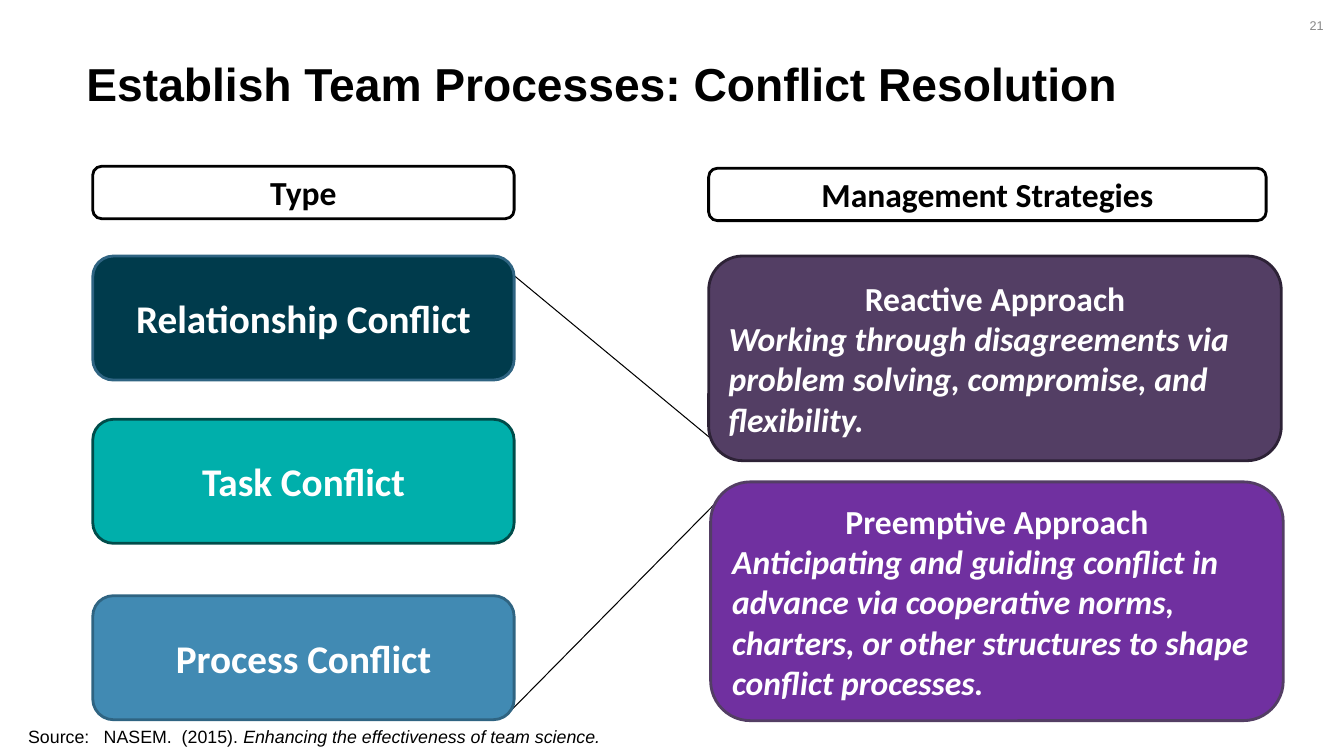
from dataclasses import dataclass

from lxml import etree
from pptx import Presentation
from pptx.dml.color import RGBColor
from pptx.enum import shapes, text
from pptx.oxml import ns
from pptx.util import Pt


@dataclass(frozen=True)
class Theme:
    heading_font: str = "Arial"
    body_font: str = "Calibri"
    black: str = "000000"
    white: str = "FFFFFF"
    gray: str = "888888"
    navy: str = "003B4C"
    teal: str = "00AFAB"
    teal_edge: str = "004C4A"
    blue: str = "418AB3"
    blue_edge: str = "2F6482"
    plum: str = "533E64"
    plum_edge: str = "2D2236"
    purple: str = "7030A0"
    title_size: float = 33
    type_size: float = 28
    body_size: float = 24
    source_size: float = 12.7
    number_size: float = 9
    border: float = 2
    connector: float = 0.75


THEME = Theme()

TYPE_LEFT, TYPE_WIDTH, TYPE_HEIGHT = 66.24, 301, 88.6
STRATEGY_LEFT, STRATEGY_WIDTH = 506.2, 409
HEADER_HEIGHT = 37.4
FIRST_ROW = 182.9


def color(value):
    return RGBColor.from_string(value)


def format_runs(paragraph, font, size, fill, bold=False, italic=False):
    for run in paragraph.runs:
        run.font.name = font
        run.font.size = Pt(size)
        run.font.color.rgb = color(fill)
        run.font.bold = bold
        run.font.italic = italic


def add_text(slide, box, content, size, fill, bold=False,
             align=text.PP_ALIGN.LEFT, anchor=text.MSO_ANCHOR.MIDDLE):
    """Add a one-paragraph text box and return its paragraph."""
    frame = slide.shapes.add_textbox(*map(Pt, box)).text_frame
    frame.word_wrap = True
    frame.vertical_anchor = anchor
    frame.text = content
    paragraph = frame.paragraphs[0]
    paragraph.alignment = align
    format_runs(paragraph, THEME.heading_font, size, fill, bold)
    return paragraph


def add_card(slide, box, fill, edge, heading, size, font_color=THEME.white, detail=None):
    """Add a rounded box with a centred heading and an optional italic detail."""
    shape = slide.shapes.add_shape(shapes.MSO_SHAPE.ROUNDED_RECTANGLE, *map(Pt, box))
    shape.shadow.inherit = False
    shape.fill.solid()
    shape.fill.fore_color.rgb = color(fill)
    shape.line.color.rgb = color(edge)
    shape.line.width = Pt(THEME.border)
    frame = shape.text_frame
    frame.word_wrap = True
    frame.vertical_anchor = text.MSO_ANCHOR.MIDDLE
    frame.text = heading
    paragraph = frame.paragraphs[0]
    paragraph.alignment = text.PP_ALIGN.CENTER
    format_runs(paragraph, THEME.body_font, size, font_color, bold=True)
    if detail:
        paragraph = frame.add_paragraph()
        paragraph.text = detail
        paragraph.alignment = text.PP_ALIGN.LEFT
        format_runs(paragraph, THEME.body_font, size, font_color, bold=True, italic=True)


def add_line(slide, *ends):
    line = slide.shapes.add_connector(shapes.MSO_CONNECTOR.STRAIGHT, *map(Pt, ends))
    line.line.color.rgb = color(THEME.black)
    line.line.width = Pt(THEME.connector)
    etree.SubElement(line._element.spPr, ns.qn("a:effectLst"))


def add_source(slide):
    paragraph = add_text(slide, (13, 514.8, 934.6, 22.3), "Source: \tNASEM.  (2015). ",
                         THEME.source_size, THEME.black, anchor=text.MSO_ANCHOR.TOP)
    properties = paragraph._p.get_or_add_pPr()
    properties.set("marL", str(Pt(54)))
    properties.set("indent", str(-Pt(54)))
    citation = paragraph.add_run()
    citation.text = "Enhancing the effectiveness of team science."
    format_runs(paragraph, THEME.heading_font, THEME.source_size, THEME.black)
    citation.font.italic = True


def main():
    presentation = Presentation()
    presentation.slide_width, presentation.slide_height = Pt(960), Pt(540)
    slide = presentation.slides.add_slide(presentation.slide_layouts[6])

    # Lines from the types to the strategies, behind the boxes
    add_line(slide, 356.4, 187.9, 519.1, 322.6)
    add_line(slide, 360.7, 511.9, 510.5, 360)

    # Title and slide number
    title = add_text(slide, (54.7, 9.4, 828, 104.4),
                     "Establish Team Processes: Conflict Resolution",
                     THEME.title_size, THEME.black, bold=True)
    title.line_spacing = 0.9
    add_text(slide, (736.6, 3.6, 216, 28.8), "21", THEME.number_size, THEME.gray,
             align=text.PP_ALIGN.RIGHT)

    # Column headers
    for left, top, width, heading in (
        (TYPE_LEFT, 118.8, TYPE_WIDTH, "Type"),
        (STRATEGY_LEFT, 120.2, 398.2, "Management Strategies"),
    ):
        add_card(slide, (left, top, width, HEADER_HEIGHT), THEME.white, THEME.black,
                 heading, THEME.body_size, THEME.black)

    # Conflict types
    for top, fill, edge, heading in (
        (FIRST_ROW, THEME.navy, THEME.blue_edge, "Relationship Conflict"),
        (299.5, THEME.teal, THEME.teal_edge, "Task Conflict"),
        (425.5, THEME.blue, THEME.blue_edge, "Process Conflict"),
    ):
        add_card(slide, (TYPE_LEFT, top, TYPE_WIDTH, TYPE_HEIGHT), fill, edge,
                 heading, THEME.type_size)

    # Management strategies
    for left, top, height, fill, edge, heading, detail in (
        (STRATEGY_LEFT, FIRST_ROW, 146.2, THEME.plum, THEME.plum_edge, "Reactive Approach",
         "Working through disagreements via problem solving, compromise, and flexibility."),
        (507.6, 344.2, 170.6, THEME.purple, THEME.plum, "Preemptive Approach",
         "Anticipating and guiding conflict in advance via cooperative norms, "
         "charters, or other structures to shape conflict processes."),
    ):
        add_card(slide, (left, top, STRATEGY_WIDTH, height), fill, edge,
                 heading, THEME.body_size, detail=detail)

    add_source(slide)
    presentation.save("out.pptx")


if __name__ == "__main__":
    main()
